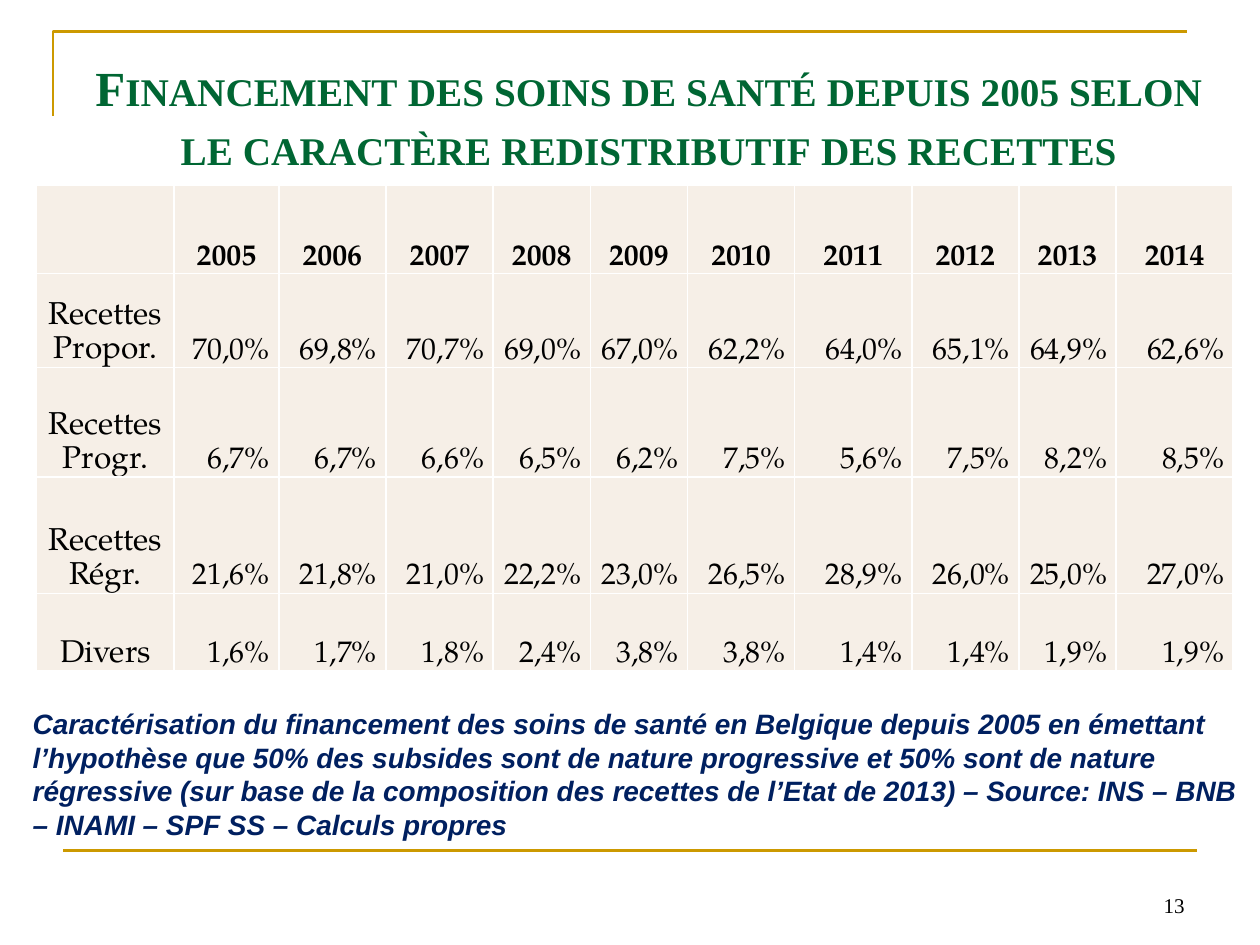
from lxml.etree import SubElement
from pptx import Presentation
from pptx.dml.color import RGBColor
from pptx.enum.shapes import MSO_CONNECTOR as Connector
from pptx.enum.text import MSO_ANCHOR as Anchor, PP_ALIGN as Align
from pptx.oxml.ns import qn
from pptx.util import Cm, Pt

GOLD = RGBColor(0xCC, 0x99, 0x00)
GREEN = RGBColor(0x00, 0x66, 0x33)
NAVY = RGBColor(0x00, 0x20, 0x60)
BLACK = RGBColor(0x00, 0x00, 0x00)
WHITE = RGBColor(0xFF, 0xFF, 0xFF)
CREAM = RGBColor(0xF6, 0xEF, 0xE7)

TITLE = ("Financement des soins de santé depuis 2005 selon "
         "le caractère redistributif des recettes")
NOTE = ("Caractérisation du financement des soins de santé en Belgique depuis 2005 "
        "en émettant l’hypothèse que 50% des subsides sont de nature progressive et "
        "50% sont de nature régressive (sur base de la composition des recettes de "
        "l’Etat de 2013) – Source: INS – BNB – INAMI – SPF SS – Calculs propres")
YEARS = range(2005, 2015)
SHARES = {
    "Recettes Propor.": "70,0 69,8 70,7 69,0 67,0 62,2 64,0 65,1 64,9 62,6",
    "Recettes Progr.": "6,7 6,7 6,6 6,5 6,2 7,5 5,6 7,5 8,2 8,5",
    "Recettes Régr.": "21,6 21,8 21,0 22,2 23,0 26,5 28,9 26,0 25,0 27,0",
    "Divers": "1,6 1,7 1,8 2,4 3,8 3,8 1,4 1,4 1,9 1,9",
}
COLUMN_WIDTHS = (2.77, 2.11, 2.16, 2.16, 1.96, 1.96, 2.16, 2.36, 2.16, 1.96, 2.36)
ROW_HEIGHTS = (1.78, 1.9, 2.21, 2.34, 1.57)


def set_font(paragraph, name, size, color, bold=False, italic=False):
    """Set the font shared by all runs of a paragraph."""
    font = paragraph.font
    font.name, font.size = name, Pt(size)
    font.bold, font.italic = bold, italic
    font.color.rgb = color


def add_frame(slide, left, top, width, height):
    """Draw the gold corner at the top and the gold rule at the foot."""
    builder = slide.shapes.build_freeform(Cm(left), Cm(top + 1.7))
    builder.add_line_segments(
        [(Cm(left), Cm(top)), (Cm(left + width), Cm(top))], close=False)
    corner = builder.convert_to_shape()
    corner.fill.background()
    corner.shadow.inherit = False
    foot = slide.shapes.add_connector(
        Connector.STRAIGHT, Cm(left + 0.2), Cm(top + height),
        Cm(left + width + 0.2), Cm(top + height))
    SubElement(foot.element.spPr, qn("a:effectLst"))
    for rule in (corner, foot):
        rule.line.color.rgb = GOLD
        rule.line.width = Pt(1.5)


def add_title(slide, left, top, width, height):
    """Place the small-caps title in the title placeholder."""
    title = slide.shapes.title
    title.left, title.top, title.width, title.height = map(Cm, (left, top, width, height))
    frame = title.text_frame
    frame.text = TITLE
    frame.vertical_anchor = Anchor.MIDDLE
    heading = frame.paragraphs[0]
    heading.alignment = Align.CENTER
    set_font(heading, "Times New Roman", 28, GREEN, bold=True)
    heading.runs[0].font._element.set("cap", "small")


def add_borders(cell):
    """Give a cell thin white borders."""
    properties = cell._tc.get_or_add_tcPr()
    for position, side in enumerate(("lnL", "lnR", "lnT", "lnB")):
        border = SubElement(properties, qn(f"a:{side}"), w=str(Pt(1)))
        properties.insert(position, border)
        fill = SubElement(border, qn("a:solidFill"))
        SubElement(fill, qn("a:srgbClr"), val=str(WHITE))


def format_cell(cell, text, alignment, size, bold):
    """Write and style one cell of the table."""
    cell.fill.solid()
    cell.fill.fore_color.rgb = CREAM
    add_borders(cell)
    cell.vertical_anchor = Anchor.BOTTOM
    cell.margin_left = cell.margin_right = Cm(0.18)
    cell.margin_top = cell.margin_bottom = 0
    cell.text = text
    entry = cell.text_frame.paragraphs[0]
    entry.alignment = alignment
    entry.line_spacing = 1.07
    set_font(entry, "TeX Gyre Pagella", size, BLACK, bold)


def add_shares_table(slide, left, top):
    """Place the table of revenue shares by year."""
    rows = [["", *map(str, YEARS)]]
    rows += [[label, *(f"{share}%" for share in shares.split())]
             for label, shares in SHARES.items()]
    table = slide.shapes.add_table(
        len(rows), len(rows[0]), Cm(left), Cm(top),
        Cm(sum(COLUMN_WIDTHS)), Cm(sum(ROW_HEIGHTS))).table
    for column, width in zip(table.columns, COLUMN_WIDTHS):
        column.width = Cm(width)
    for row, height in zip(table.rows, ROW_HEIGHTS):
        row.height = Cm(height)
    for r, texts in enumerate(rows):
        for c, text in enumerate(texts):
            alignment = Align.RIGHT if r and c else Align.CENTER
            size = 18 if r and not c else 17
            format_cell(table.cell(r, c), text, alignment, size, bold=r == 0)


def add_text(slide, box, text, anchor=Anchor.TOP):
    """Add a wrapping text box and return its paragraph."""
    frame = slide.shapes.add_textbox(*map(Cm, box)).text_frame
    frame.word_wrap = True
    frame.vertical_anchor = anchor
    frame.text = text
    return frame.paragraphs[0]


def add_page_number(slide, *box):
    """Place the page number."""
    number = add_text(slide, box, "13", Anchor.BOTTOM)
    number.alignment = Align.RIGHT
    set_font(number, "Times New Roman", 12, BLACK)


def add_note(slide, *box):
    """Place the note on method and sources."""
    note = add_text(slide, box, NOTE)
    set_font(note, "Arial", 16, NAVY, bold=True, italic=True)


def main():
    """Build and save the slide."""
    deck = Presentation()
    deck.slide_width, deck.slide_height = Cm(25.4), Cm(19.05)
    slide = deck.slides.add_slide(deck.slide_layouts[5])
    add_frame(slide, 1.07, 0.63, 22.86, 16.51)
    add_title(slide, 1.27, 0.76, 23.62, 3.18)
    add_shares_table(slide, 0.74, 3.73)
    add_page_number(slide, 18.21, 17.35, 5.92, 1.27)
    add_note(slide, 0.41, 14.12, 24.79, 3)
    deck.save("out.pptx")


if __name__ == "__main__":
    main()
